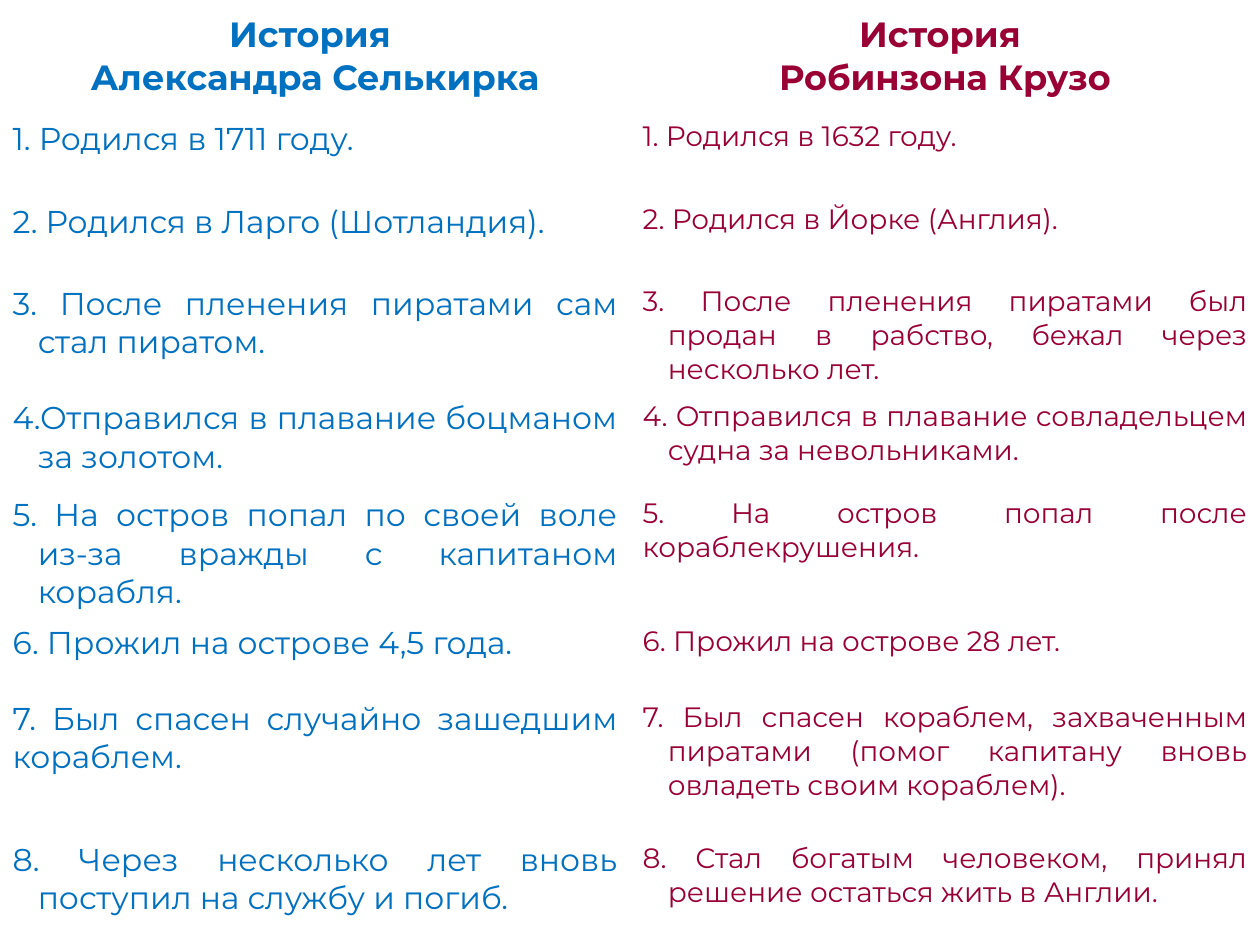
from lxml.etree import SubElement
from pptx import Presentation
from pptx.dml.color import RGBColor
from pptx.enum.text import MSO_ANCHOR as Anchor, PP_ALIGN as Align
from pptx.oxml.ns import qn
from pptx.util import Pt

FONT = "Montserrat"
SLIDE_WIDTH, SLIDE_HEIGHT = 720, 540
ROW_HEIGHTS = [64.8, 47.5, 46.8, 44.6, 55.4, 49.7, 43.2, 80.6, 108]
HANGING = 14.4

# Each column: colour, size of the facts, title, facts, numbers of hanging facts
STORIES = [
    ("0070C0", 18, "История \nАлександра Селькирка", [
        "1. Родился в 1711 году.",
        "2. Родился в Ларго (Шотландия).",
        "3. После пленения пиратами сам стал пиратом.",
        "4.Отправился в плавание боцманом за золотом.",
        "5. На остров попал по своей воле из-за вражды с капитаном корабля.",
        "6. Прожил на острове 4,5 года.",
        "7. Был спасен случайно зашедшим кораблем.",
        "8. Через несколько лет вновь поступил на службу и погиб.",
    ], {3, 4, 5, 8}),
    ("990033", 16, "История \nРобинзона Крузо", [
        "1. Родился в 1632 году.",
        "2. Родился в Йорке (Англия).",
        "3. После пленения пиратами был продан в рабство, бежал через несколько лет.",
        "4. Отправился в плавание совладельцем судна за невольниками.",
        "5. На остров попал после кораблекрушения.",
        "6. Прожил на острове 28 лет.",
        "7. Был спасен кораблем, захваченным пиратами "
        "(помог капитану вновь овладеть своим кораблем).",
        "8. Стал богатым человеком, принял решение остаться жить в Англии.",
    ], {3, 4, 7, 8}),
]


def rgb(hex_color):
    return RGBColor.from_string(hex_color)


def set_borders(cell, color, width):
    properties = cell._tc.get_or_add_tcPr()
    for side in ("a:lnL", "a:lnR", "a:lnT", "a:lnB"):
        line = SubElement(properties, qn(side), w=str(Pt(width)))
        fill = SubElement(line, qn("a:solidFill"))
        SubElement(fill, qn("a:srgbClr"), val=color)


def fill_cell(cell, text, color, size, align, bold=False, hanging=False):
    set_borders(cell, "FFFFFF", 1)
    cell.fill.background()
    cell.text = text
    for paragraph in cell.text_frame.paragraphs:
        paragraph.alignment = align
        if hanging:
            indent = paragraph._p.get_or_add_pPr()
            indent.set("marL", str(Pt(HANGING)))
            indent.set("indent", str(-Pt(HANGING)))
        font = paragraph.font
        font.name, font.size, font.bold = FONT, Pt(size), bold
        font.color.rgb = rgb(color)


def add_comparison(slide):
    table = slide.shapes.add_table(
        len(ROW_HEIGHTS), len(STORIES), Pt(0), Pt(0),
        Pt(SLIDE_WIDTH), Pt(sum(ROW_HEIGHTS))).table
    table.first_row = table.horz_banding = False
    for row, height in zip(table.rows, ROW_HEIGHTS):
        row.height = Pt(height)

    for column, (color, size, title, facts, hanging) in enumerate(STORIES):
        # Column title
        heading = table.cell(0, column)
        fill_cell(heading, title, color, 20, Align.CENTER, bold=True)
        heading.vertical_anchor = Anchor.MIDDLE
        # Numbered facts
        for number, fact in enumerate(facts, 1):
            fill_cell(table.cell(number, column), fact, color, size,
                      Align.JUSTIFY, hanging=number in hanging)


def main():
    presentation = Presentation()
    presentation.slide_width = Pt(SLIDE_WIDTH)
    presentation.slide_height = Pt(SLIDE_HEIGHT)
    slide = presentation.slides.add_slide(presentation.slide_layouts[6])
    add_comparison(slide)
    presentation.save("out.pptx")


if __name__ == "__main__":
    main()
